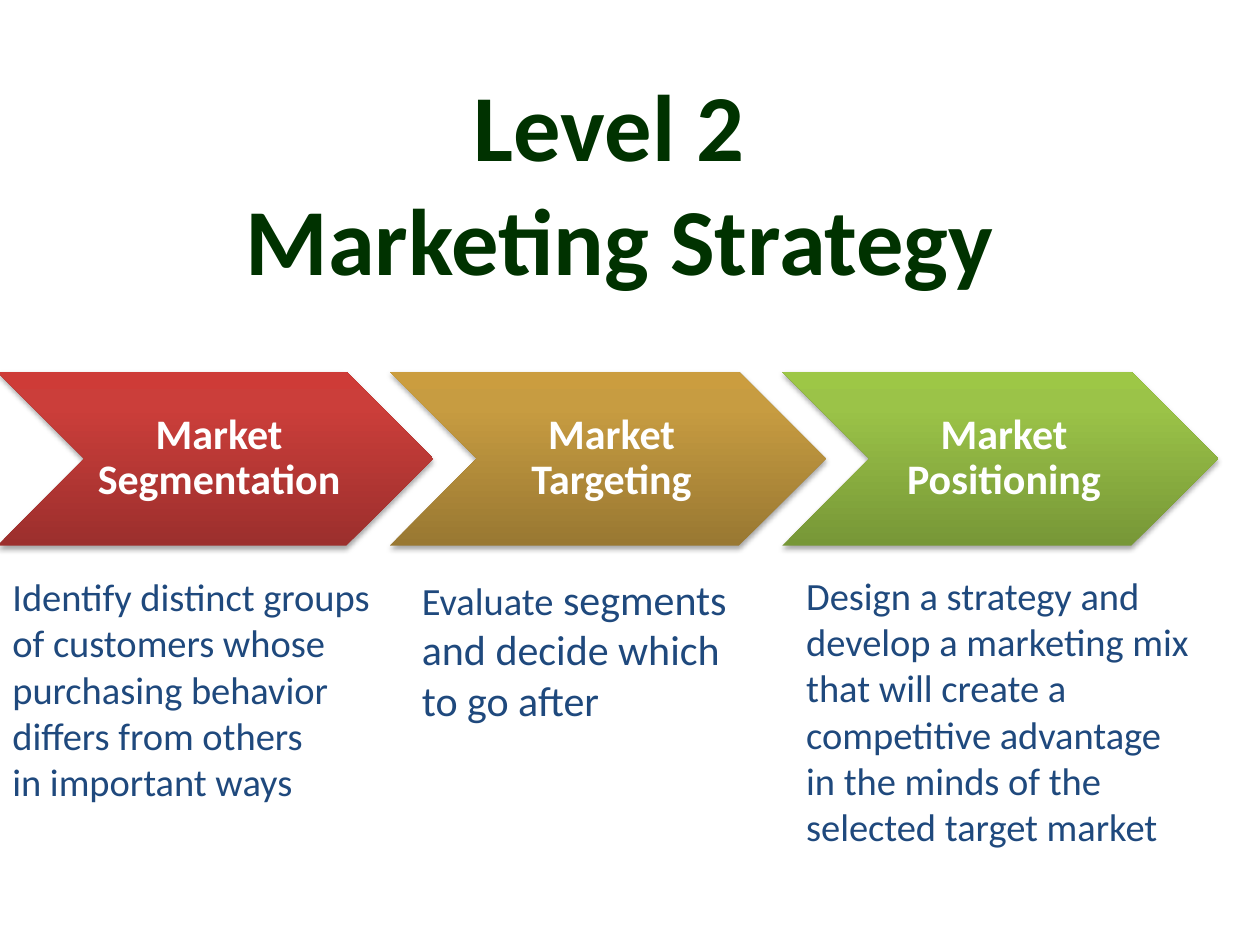
import copy
from dataclasses import dataclass

import pptx
import pptx.dml.color
import pptx.enum.shapes
import pptx.enum.text
import pptx.oxml
import pptx.oxml.ns
import pptx.util
from pptx.util import Inches, Pt


@dataclass(frozen=True)
class Theme:
    font: str = "Calibri"
    title_color: str = "003200"
    label_color: str = "FFFFFF"
    body_color: str = "1F497D"
    title_size: int = 54
    large_size: int = 24
    body_size: int = 22


THEME = Theme()


@dataclass(frozen=True)
class Span:
    text: str
    size: int = THEME.body_size


@dataclass(frozen=True)
class Caption:
    left: float
    top: float
    width: float
    height: float
    paragraphs: tuple[tuple[Span, ...], ...]
    wrap: bool = True


@dataclass(frozen=True)
class Step:
    label: str
    gradient: tuple[str, str, str]  # bottom to top
    caption: Caption


STEPS = (
    Step("Market Segmentation", ("9C2F2D", "CB3E3A", "CE3B37"), Caption(
        0, 4.5, 3.07, 1.95,
        ((Span("Identify distinct groups\vof customers whose\vpurchasing behavior"),),
         (Span("differs from others \vin important ways"),)),
        wrap=False)),
    Step("Market Targeting", ("997832", "C79C41", "CB9D3F"), Caption(
        3.25, 4.5, 2.86, 1.31,
        ((Span("Evaluate"), Span(" segments", THEME.large_size)),
         (Span("and decide which", THEME.large_size),),
         (Span("to go after", THEME.large_size),)))),
    Step("Market Positioning", ("779737", "9BC348", "9DC746"), Caption(
        6.3, 4.49, 3.25, 2.32,
        ((Span("Design a strategy and develop a marketing mix that will create "
               "a competitive advantage in the minds of the selected target market"),),))),
)
STOP_POSITIONS = (0, 0.8, 1)
CHEVRON_LEFT, CHEVRON_TOP = -0.02, 2.95
CHEVRON_WIDTH, CHEVRON_HEIGHT = 3.46, 1.38
CHEVRON_PITCH = 3.115


def rgb(value: str) -> pptx.dml.color.RGBColor:
    return pptx.dml.color.RGBColor.from_string(value)


def style_run(run, size: int, color: str, bold: bool = False) -> None:
    run.font.name = THEME.font
    run.font.size = Pt(size)
    run.font.bold = bold
    run.font.color.rgb = rgb(color)


def fill_gradient(shape, colors: tuple[str, ...]) -> None:
    shape.fill.gradient()
    shape.fill.gradient_angle = 90
    stop_list = shape._element.spPr.find(".//" + pptx.oxml.ns.qn("a:gsLst"))
    stop_list.append(copy.deepcopy(stop_list[-1]))
    for stop, color, position in zip(shape.fill.gradient_stops, colors, STOP_POSITIONS):
        stop.color.rgb = rgb(color)
        stop.position = position


def add_shadow(shape) -> None:
    shape.shadow.inherit = False
    effects = shape._element.spPr.find(pptx.oxml.ns.qn("a:effectLst"))
    effects.append(pptx.oxml.parse_xml(
        f'<a:outerShdw {pptx.oxml.ns.nsdecls("a")} blurRad="{Pt(3.1)}" dist="{Pt(1.8)}" '
        'dir="5400000" rotWithShape="0"><a:srgbClr val="000000">'
        '<a:alpha val="35000"/></a:srgbClr></a:outerShdw>'))


def add_title(page, text: str) -> None:
    box = page.shapes.add_textbox(Inches(0.42), Inches(0.92), Inches(9), Inches(1.03))
    frame = box.text_frame
    frame.word_wrap = True
    frame.vertical_anchor = pptx.enum.text.MSO_ANCHOR.MIDDLE
    para = frame.paragraphs[0]
    para.text = text
    para.alignment = pptx.enum.text.PP_ALIGN.CENTER
    for run in para.runs:
        style_run(run, THEME.title_size, THEME.title_color, bold=True)


def add_chevron(page, step: Step, left: float) -> None:
    shape = page.shapes.add_shape(
        pptx.enum.shapes.MSO_SHAPE.CHEVRON, Inches(left), Inches(CHEVRON_TOP),
        Inches(CHEVRON_WIDTH), Inches(CHEVRON_HEIGHT))
    fill_gradient(shape, step.gradient)
    shape.line.fill.background()
    add_shadow(shape)

    frame = shape.text_frame
    frame.text = step.label
    frame.word_wrap = True
    frame.vertical_anchor = pptx.enum.text.MSO_ANCHOR.MIDDLE
    frame.margin_left = Inches(0.1)
    frame.margin_top = frame.margin_right = frame.margin_bottom = Inches(0.04)
    para = frame.paragraphs[0]
    para.alignment = pptx.enum.text.PP_ALIGN.CENTER
    para.line_spacing = 0.9
    style_run(para.runs[0], THEME.large_size, THEME.label_color, bold=True)


def add_caption(page, caption: Caption) -> None:
    box = page.shapes.add_textbox(Inches(caption.left), Inches(caption.top),
                                  Inches(caption.width), Inches(caption.height))
    frame = box.text_frame
    frame.word_wrap = caption.wrap
    frame.auto_size = pptx.enum.text.MSO_AUTO_SIZE.SHAPE_TO_FIT_TEXT
    for index, spans in enumerate(caption.paragraphs):
        para = frame.add_paragraph() if index else frame.paragraphs[0]
        first, *others = spans
        para.text = first.text
        for run in para.runs:
            style_run(run, first.size, THEME.body_color)
        for span in others:
            run = para.add_run()
            run.text = span.text
            style_run(run, span.size, THEME.body_color)


def main() -> None:
    deck = pptx.Presentation()
    deck.slide_width, deck.slide_height = Inches(10), Inches(7.5)
    page = deck.slides.add_slide(deck.slide_layouts[6])

    # Heading
    add_title(page, "Level 2 \vMarketing Strategy")

    # Process arrows
    for index, step in enumerate(STEPS):
        add_chevron(page, step, CHEVRON_LEFT + index * CHEVRON_PITCH)

    # Explanations below the arrows
    for step in STEPS:
        add_caption(page, step.caption)

    deck.save("out.pptx")


if __name__ == "__main__":
    main()
